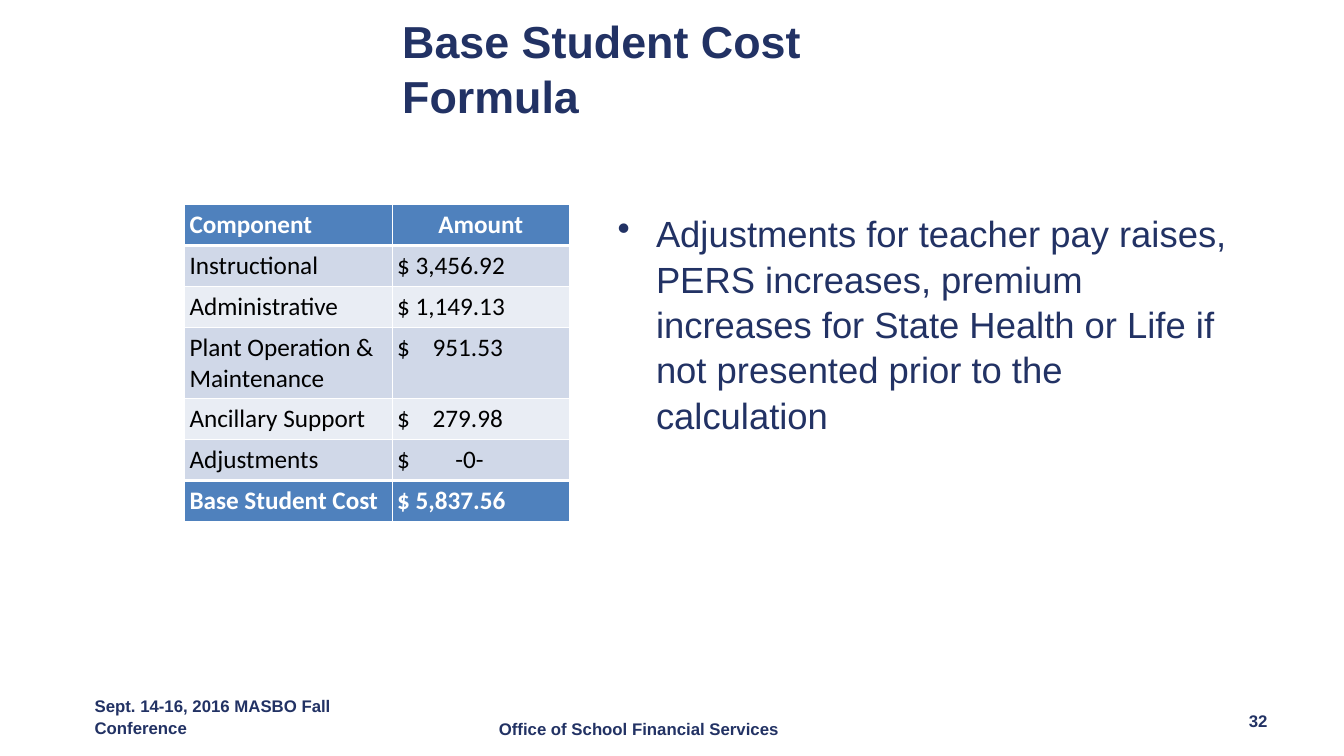
import pptx
import pptx.dml.color
import pptx.enum.text
import pptx.oxml
import pptx.oxml.ns
import pptx.util
from dataclasses import dataclass


@dataclass(frozen=True)
class Theme:
    navy: str = "223264"
    blue: str = "4F81BD"
    bands: tuple = ("D0D8E8", "E9EDF4")
    white: str = "FFFFFF"
    black: str = "000000"
    font: str = "Arial"
    table_font: str = "Calibri"
    title_size: int = 32
    body_size: int = 26
    table_size: int = 18
    footer_size: int = 12
    spacing: float = 1.04
    footer_spacing: float = 1.08


theme = Theme()
align = pptx.enum.text.PP_ALIGN
anchor = pptx.enum.text.MSO_ANCHOR

presentation = pptx.Presentation()
presentation.slide_width = pptx.util.Inches(13.33)
presentation.slide_height = pptx.util.Inches(7.5)
column_unit = presentation.slide_width / 40
row_unit = presentation.slide_height / 30
slide = presentation.slides.add_slide(presentation.slide_layouts[5])


def grid(column, row, columns, rows):
    return (int(column * column_unit), int(row * row_unit),
            int(columns * column_unit), int(rows * row_unit))


def style(paragraph, font, size, color, bold=False, alignment=align.LEFT):
    paragraph.alignment = alignment
    for run in paragraph.runs:
        run.font.name = font
        run.font.size = pptx.util.Pt(size)
        run.font.bold = bold
        run.font.color.rgb = pptx.dml.color.RGBColor.from_string(color)


title = slide.shapes.title
title.left, title.top, title.width, title.height = grid(11.67, 0.24, 17.67, 4.68)
title.text_frame.text = "Base Student Cost Formula"
title.text_frame.word_wrap = True
title.text_frame.auto_size = pptx.enum.text.MSO_AUTO_SIZE.NONE
title.text_frame.vertical_anchor = anchor.TOP
paragraph = title.text_frame.paragraphs[0]
paragraph.line_spacing = theme.spacing
style(paragraph, theme.font, theme.title_size, theme.navy, True)

costs = [
    ("Component", "Amount"),
    ("Instructional", "$ 3,456.92"),
    ("Administrative", "$ 1,149.13"),
    ("Plant Operation & Maintenance", "$    951.53"),
    ("Ancillary Support", "$    279.98"),
    ("Adjustments", "$        -0-"),
    ("Base Student Cost", "$ 5,837.56"),
]
last = len(costs) - 1
column_widths = (6.18, 5.28)
row_height = 1.6
table = slide.shapes.add_table(
    len(costs), 2, *grid(5.49, 8.12, sum(column_widths), row_height * len(costs))).table
for column, width in zip(table.columns, column_widths):
    column.width = int(width * column_unit)

for row_index, values in enumerate(costs):
    table.rows[row_index].height = int(row_height * row_unit)
    emphasized = row_index in (0, last)
    fill = theme.blue if emphasized else theme.bands[(row_index - 1) % 2]
    widths = {"L": 1, "R": 1,
              "T": 3 if row_index in (1, last) else 1,
              "B": 3 if row_index in (0, last - 1) else 1}
    for column_index, value in enumerate(values):
        cell = table.cell(row_index, column_index)
        cell.text_frame.text = value
        cell.margin_left = cell.margin_right = pptx.util.Inches(0.05)
        cell.margin_top = cell.margin_bottom = pptx.util.Inches(0.05)
        centered = row_index == 0 and column_index == 1
        style(cell.text_frame.paragraphs[0], theme.table_font, theme.table_size,
              theme.white if emphasized else theme.black, emphasized,
              align.CENTER if centered else align.LEFT)
        properties = cell._tc.get_or_add_tcPr()
        for side, points in widths.items():
            properties.append(pptx.oxml.parse_xml(
                f'<a:ln{side} {pptx.oxml.ns.nsdecls("a")} w="{pptx.util.Pt(points)}">'
                f'<a:solidFill><a:srgbClr val="{theme.white}"/></a:solidFill></a:ln{side}>'))
        cell.fill.solid()
        cell.fill.fore_color.rgb = pptx.dml.color.RGBColor.from_string(fill)

body = slide.shapes.add_textbox(*grid(18.09, 8.12, 19.02, 9))
body.text_frame.word_wrap = True
body.text_frame.text = (
    "Adjustments for teacher pay raises, PERS increases, premium increases "
    "for State Health or Life if not presented prior to the calculation")
paragraph = body.text_frame.paragraphs[0]
paragraph.line_spacing = theme.spacing
properties = paragraph._p.get_or_add_pPr()
indent = pptx.util.Inches(0.38)
properties.set("marL", str(indent))
properties.set("indent", str(-indent))
properties.append(pptx.oxml.parse_xml(
    f'<a:buChar {pptx.oxml.ns.nsdecls("a")} char="•"/>'))
style(paragraph, theme.font, theme.body_size, theme.navy)

footers = [
    ("Sept. 14-16, 2016 MASBO Fall Conference", 2.52, 27.32, align.LEFT),
    ("Office of School Financial Services", 14.55, 27.8, align.LEFT),
    ("32", 28.69, 27.48, align.RIGHT),
]
for text, column, row, alignment in footers:
    footer = slide.shapes.add_textbox(*grid(column, row, 9.33, 2.2))
    footer.text_frame.word_wrap = True
    footer.text_frame.vertical_anchor = anchor.MIDDLE
    footer.text_frame.text = text
    paragraph = footer.text_frame.paragraphs[0]
    paragraph.line_spacing = theme.footer_spacing
    style(paragraph, theme.font, theme.footer_size, theme.navy, True, alignment)

presentation.save("out.pptx")
